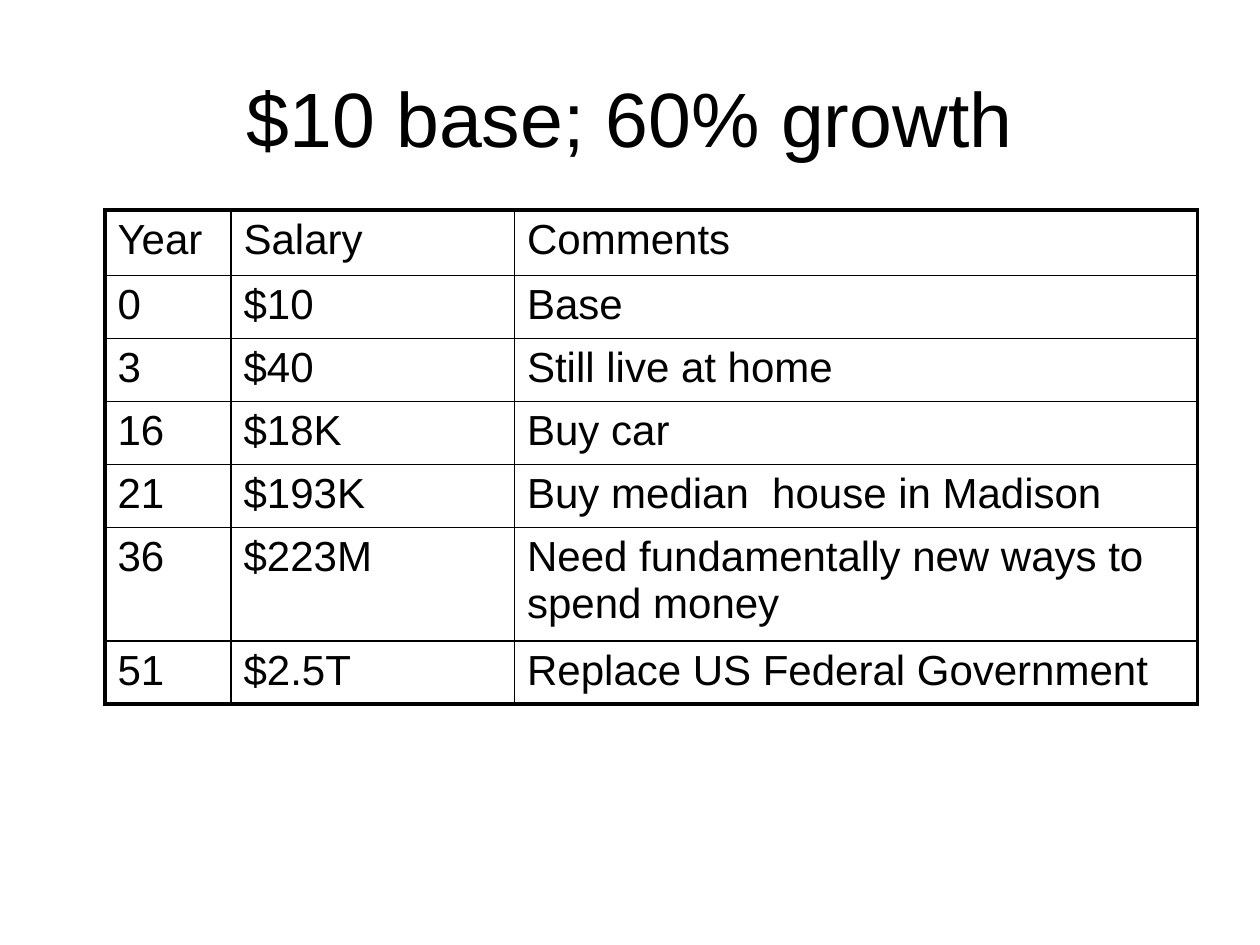
from dataclasses import dataclass

from lxml.etree import SubElement
from pptx import Presentation
from pptx.dml.color import RGBColor
from pptx.enum.text import MSO_ANCHOR, PP_ALIGN
from pptx.oxml import parse_xml
from pptx.oxml.ns import nsdecls, qn
from pptx.slide import Slide
from pptx.table import _Cell
from pptx.text.text import _Paragraph
from pptx.util import Inches, Pt


@dataclass(frozen=True)
class Theme:
    """Colours, font, type sizes and line widths of the slide."""
    ink: str = "000000"
    paper: str = "FFFFFF"
    font: str = "Arial"
    title: float = 44
    body: float = 24
    outer: float = 2.25
    inner: float = 1
    space_before: int = 20000


@dataclass(frozen=True)
class Row:
    """One line of the salary table."""
    year: str
    salary: str
    comment: str
    height: float = 0.49

    @property
    def texts(self) -> tuple[str, str, str]:
        """Return the cell texts from left to right."""
        return self.year, self.salary, self.comment


THEME = Theme()
WIDTH, HEIGHT = 10, 7.5
COLUMNS = (1, 2.25, 5.42)
ROWS = (
    Row("Year", "Salary", "Comments", 0.52),
    Row("0", "$10", "Base"),
    Row("3", "$40", "Still live at home"),
    Row("16", "$18K", "Buy car"),
    Row("21", "$193K", "Buy median  house in Madison"),
    Row("36", "$223M", "Need fundamentally new ways to spend money"),
    Row("51", "$2.5T", "Replace US Federal Government"),
)


def write(p: _Paragraph, text: str, size: float) -> None:
    """Add a run of text in the theme font."""
    r = p.add_run()
    r.text = text
    for name, value in {"name": THEME.font, "size": Pt(size), "bold": False}.items():
        setattr(r.font, name, value)
    r.font.color.rgb = RGBColor.from_string(THEME.ink)


def draw_title(s: Slide, text: str) -> None:
    """Draw the centred title."""
    box = s.shapes.add_textbox(
        Inches(0.05 * WIDTH), Inches(0.04 * HEIGHT), Inches(0.9 * WIDTH), Inches(HEIGHT / 6)
    )
    tf = box.text_frame
    for name, value in {"word_wrap": True, "vertical_anchor": MSO_ANCHOR.MIDDLE}.items():
        setattr(tf, name, value)
    p = tf.paragraphs[0]
    p.alignment = PP_ALIGN.CENTER
    write(p, text, THEME.title)


def draw_borders(cell: _Cell, outer: dict[str, bool]) -> None:
    """Give each side its line, heavier on the table's edge."""
    tcPr = cell._tc.get_or_add_tcPr()
    for index, (side, is_outer) in enumerate(outer.items()):
        width = Pt(THEME.outer if is_outer else THEME.inner)
        tcPr.insert(index, parse_xml(
            f'<a:ln{side} {nsdecls("a")} w="{width}"><a:solidFill>'
            f'<a:srgbClr val="{THEME.ink}"/></a:solidFill></a:ln{side}>'
        ))


def draw_cell(cell: _Cell, text: str, outer: dict[str, bool]) -> None:
    """Fill one cell with its text and borders."""
    cell.fill.background()
    draw_borders(cell, outer)
    p = cell.text_frame.paragraphs[0]
    spacing = SubElement(p._p.get_or_add_pPr(), qn("a:spcBef"))
    SubElement(spacing, qn("a:spcPct")).set("val", str(THEME.space_before))
    write(p, text, THEME.body)


def draw_table(s: Slide, rows: tuple[Row, ...]) -> None:
    """Draw the salary table."""
    table = s.shapes.add_table(
        len(rows), len(COLUMNS), Inches(WIDTH / 12), Inches(HEIGHT * 2 / 9),
        Inches(sum(COLUMNS)), Inches(sum(row.height for row in rows)),
    ).table
    for name in ("first_row", "horz_banding"):
        setattr(table, name, False)
    for column, width in zip(table.columns, COLUMNS):
        column.width = Inches(width)
    for i, row in enumerate(rows):
        table.rows[i].height = Inches(row.height)
        for j, text in enumerate(row.texts):
            outer = {"L": j == 0, "R": j == len(COLUMNS) - 1,
                     "T": i == 0, "B": i == len(rows) - 1}
            draw_cell(table.cell(i, j), text, outer)


def main() -> None:
    """Build and save the slide."""
    prs = Presentation()
    prs.slide_width, prs.slide_height = Inches(WIDTH), Inches(HEIGHT)
    s = prs.slides.add_slide(prs.slide_layouts[6])
    s.background.fill.solid()
    s.background.fill.fore_color.rgb = RGBColor.from_string(THEME.paper)
    draw_title(s, "$10 base; 60% growth")
    draw_table(s, ROWS)
    prs.save("out.pptx")


if __name__ == "__main__":
    main()
